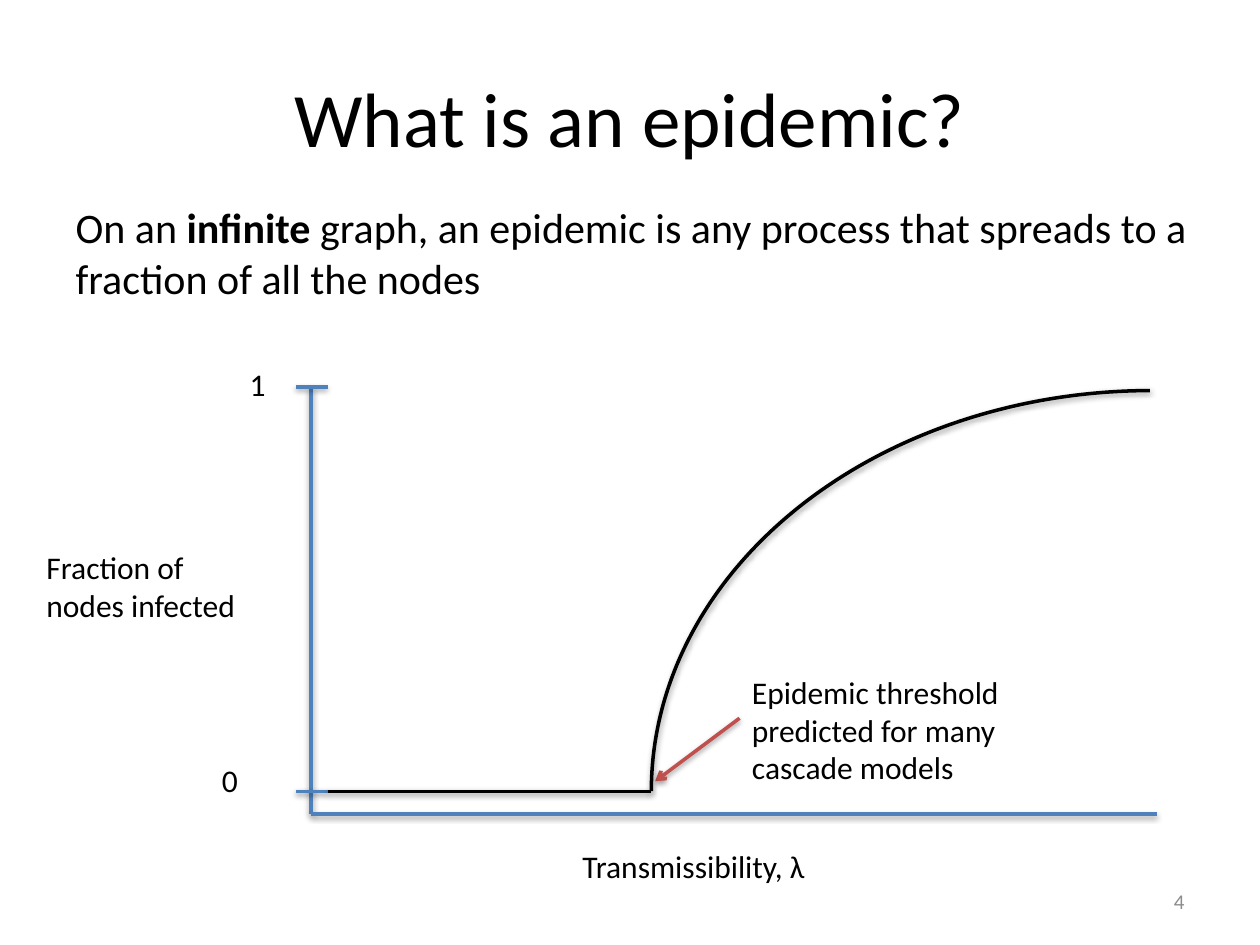
from lxml import etree
from pptx import Presentation
from pptx import util as u
from pptx.dml.color import RGBColor
from pptx.enum import shapes, text
from pptx.oxml import ns

W, H = 10, 7.5
FONT = "Calibri"
COLORS = {"ink": "000000", "axis": "4F81BD", "arrow": "C0504D",
          "page": "8C8C8C", "paper": "FFFFFF"}
LEFT, CENTER, RIGHT = text.PP_ALIGN.LEFT, text.PP_ALIGN.CENTER, text.PP_ALIGN.RIGHT

TITLE = [[("What is an epidemic?", False)]]
BODY = [[("On an ", False), ("infinite", True),
         (" graph, an epidemic is any process that spreads to a fraction of all the nodes", False)]]

X_AXIS, TICK_END, THRESHOLD, X_END = 2.47, 2.6, 5.17, 9.18
ONE, ZERO, BASE = 3.07, 6.28, 6.46
TICK_START = 2.35

LINES = [
    ((X_AXIS, ONE), (X_AXIS, BASE), "axis", False),
    ((X_AXIS, BASE), (X_END, BASE), "axis", False),
    ((TICK_START, ZERO), (TICK_END, ZERO), "axis", False),
    ((TICK_START, ONE), (TICK_END, ONE), "axis", False),
    ((TICK_END, ZERO), (THRESHOLD, ZERO), "ink", False),
    ((5.87, 5.7), (5.2, 6.2), "arrow", True),
]
CURVE = (THRESHOLD, 3.1, 7.94, 2 * (ZERO - 3.1))

LABELS = [
    (["Fraction of nodes infected"], (0.27, 4.3, 1.7, 0.71), LEFT),
    (["1"], (1.4, 2.85, 1.29, 0.4), CENTER),
    (["0"], (1.18, 5.99, 1.29, 0.4), CENTER),
    (["Transmissibility, λ"], (3.17, 6.67, 4.67, 0.4), CENTER),
    (["Epidemic threshold", "predicted for many", "cascade models"],
     (5.87, 5.29, 2.37, 1.01), LEFT),
]
PAGE = (["4"], (7.17, 6.95, 2.33, 0.4), RIGHT)


def rgb(name):
    return RGBColor.from_string(COLORS[name])


def inches(values):
    return [u.Inches(v) for v in values]


def place(sp, box):
    for name, value in zip(("left", "top", "width", "height"), inches(box)):
        setattr(sp, name, value)


def write(sp, paragraphs, size, align, anchor, color="ink"):
    tf = sp.text_frame
    for name, value in {"word_wrap": True, "vertical_anchor": anchor}.items():
        setattr(tf, name, value)
    for i, runs in enumerate(paragraphs):
        p = tf.add_paragraph() if i else tf.paragraphs[0]
        for name, value in {"alignment": align, "space_before": u.Pt(0)}.items():
            setattr(p, name, value)
        for words, bold in runs:
            r = p.add_run()
            r.text = words
            for name, value in {"name": FONT, "size": u.Pt(size), "bold": bold}.items():
                setattr(r.font, name, value)
            r.font.color.rgb = rgb(color)


def stroke(sp, color, arrow=False):
    sp.line.color.rgb = rgb(color)
    sp.line.width = u.Pt(2)
    if arrow:
        etree.SubElement(sp.line._get_or_add_ln(), ns.qn("a:tailEnd"), type="arrow")
    effects = etree.SubElement(sp._element.spPr, ns.qn("a:effectLst"))
    shadow = etree.SubElement(effects, ns.qn("a:outerShdw"), blurRad="40000",
                              dist="20000", dir="5400000", rotWithShape="0")
    tint = etree.SubElement(shadow, ns.qn("a:srgbClr"), val=COLORS["ink"])
    etree.SubElement(tint, ns.qn("a:alpha"), val="38000")


def add_label(s, lines, box, align, size=18, anchor=text.MSO_ANCHOR.TOP, color="ink"):
    sp = s.shapes.add_textbox(*inches(box))
    write(sp, [[(line, False)] for line in lines], size, align, anchor, color)
    return sp


def main():
    prs = Presentation()
    prs.slide_width, prs.slide_height = inches((W, H))
    s = prs.slides.add_slide(prs.slide_layouts[1])
    s.background.fill.solid()
    s.background.fill.fore_color.rgb = rgb("paper")

    title, body = s.placeholders
    place(title, (0.5, 0.3, 9, 1.25))
    write(title, TITLE, 44, CENTER, text.MSO_ANCHOR.MIDDLE)
    place(body, (0.5, 1.55, 9.29, 0.91))
    write(body, BODY, 24, LEFT, text.MSO_ANCHOR.TOP)
    pPr = body.text_frame.paragraphs[0]._p.get_or_add_pPr()
    for name in ("marL", "indent"):
        pPr.set(name, "0")
    etree.SubElement(pPr, ns.qn("a:buNone"))

    for start, end, color, arrow in LINES:
        line = s.shapes.add_connector(shapes.MSO_CONNECTOR.STRAIGHT, *inches(start + end))
        stroke(line, color, arrow)

    curve = s.shapes.add_shape(shapes.MSO_SHAPE.ARC, *inches(CURVE))
    curve.adjustments[0], curve.adjustments[1] = 162.137, 0
    curve._element.spPr.find(ns.qn("a:xfrm")).set("flipH", "1")
    curve.fill.background()
    stroke(curve, "ink")

    for label in LABELS:
        add_label(s, *label)
    add_label(s, *PAGE, size=12, anchor=text.MSO_ANCHOR.MIDDLE, color="page")

    prs.save("out.pptx")


if __name__ == "__main__":
    main()
